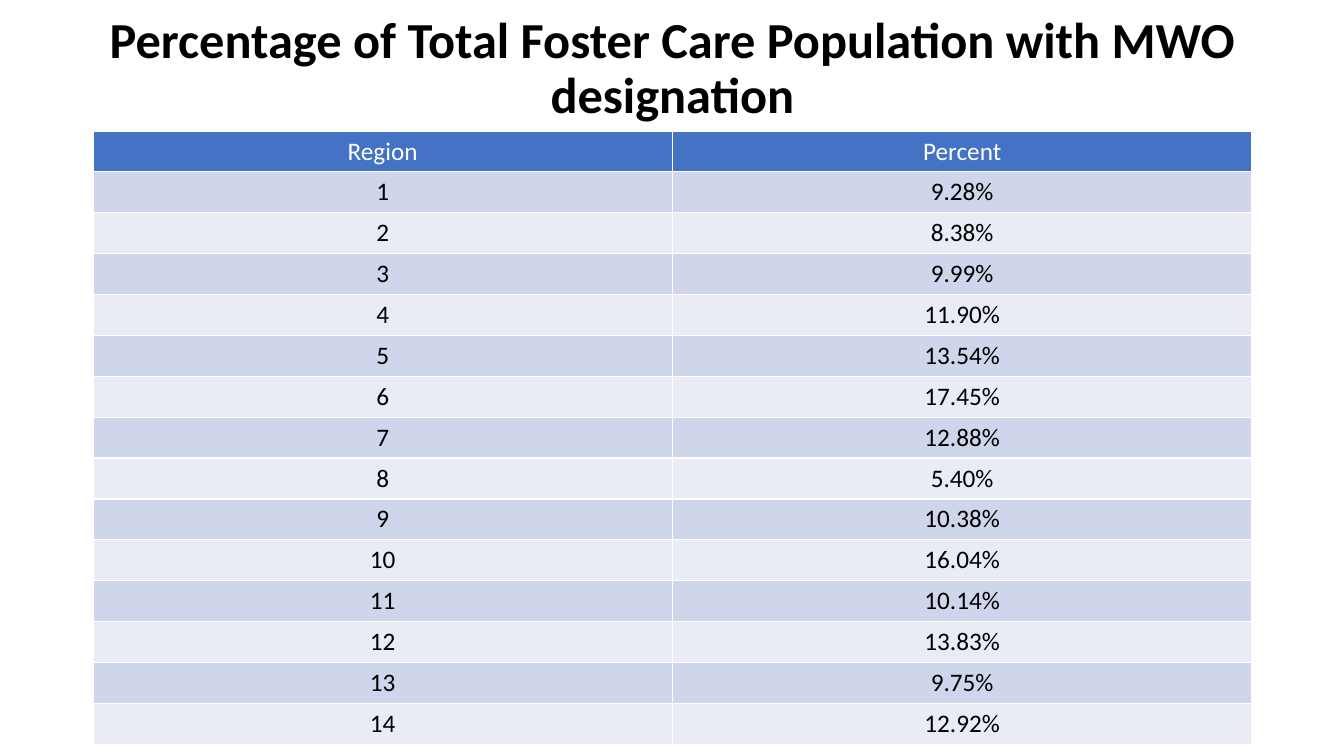
from lxml.etree import SubElement
from pptx import Presentation
from pptx.dml.color import RGBColor
from pptx.enum.text import MSO_ANCHOR as Anchor, MSO_AUTO_SIZE as AutoSize, PP_ALIGN as Align
from pptx.oxml.ns import qn
from pptx.util import Pt

PX = 9071  # EMU per px, 100.8 px to the inch
LEFT, TABLE_TOP, WIDTH, ROW_HEIGHT = 93, 131, 1159, 40
TITLE_TOP = 8
WHITE, BLACK, HEADER_BLUE = "FFFFFF", "000000", "4472C4"
BANDS = ["E9EBF5", "CFD5EA"]
PERCENTS = ["9.28%", "8.38%", "9.99%", "11.90%", "13.54%", "17.45%", "12.88%",
            "5.40%", "10.38%", "16.04%", "10.14%", "13.83%", "9.75%", "12.92%"]


def write_centred(frame, text, color, size, bold):
    para = frame.paragraphs[0]
    para.alignment = Align.CENTER
    span = para.add_run()
    span.text = text
    for name, value in {"name": "Calibri", "size": Pt(size), "bold": bold}.items():
        setattr(span.font, name, value)
    span.font.color.rgb = RGBColor.from_string(color)
    return para


def add_border(cell, side):
    line = SubElement(cell._tc.get_or_add_tcPr(), qn(f"a:ln{side}"), w=str(Pt(1)))
    fill = SubElement(line, qn("a:solidFill"))
    SubElement(fill, qn("a:srgbClr"), val=WHITE)


deck = Presentation()
deck.slide_width, deck.slide_height = 1344 * PX, 756 * PX
page = deck.slides.add_slide(deck.slide_layouts[5])

# Both title lines fit between the top of the slide and the table.
title = page.shapes.title
for name, value in {"left": LEFT, "top": TITLE_TOP, "width": WIDTH,
                    "height": TABLE_TOP - TITLE_TOP}.items():
    setattr(title, name, value * PX)
frame = title.text_frame
for name, value in {"auto_size": AutoSize.NONE, "word_wrap": True,
                    "vertical_anchor": Anchor.MIDDLE}.items():
    setattr(frame, name, value)
heading = write_centred(frame, "Percentage of Total Foster Care Population with MWO designation",
                        BLACK, 36, True)
heading.line_spacing = 0.9

rows = [("Region", "Percent")]
rows += [(str(region), percent) for region, percent in enumerate(PERCENTS, 1)]
table = page.shapes.add_table(len(rows), 2, LEFT * PX, TABLE_TOP * PX, WIDTH * PX,
                              len(rows) * ROW_HEIGHT * PX).table
table.first_row = table.horz_banding = False

for row_number, texts in enumerate(rows):
    is_header = row_number == 0
    for column, text in enumerate(texts):
        cell = table.cell(row_number, column)
        write_centred(cell.text_frame, text, WHITE if is_header else BLACK, 18, False)
        for side in "LRTB":
            add_border(cell, side)
        cell.fill.solid()
        cell.fill.fore_color.rgb = RGBColor.from_string(
            HEADER_BLUE if is_header else BANDS[row_number % 2])

deck.save("out.pptx")
